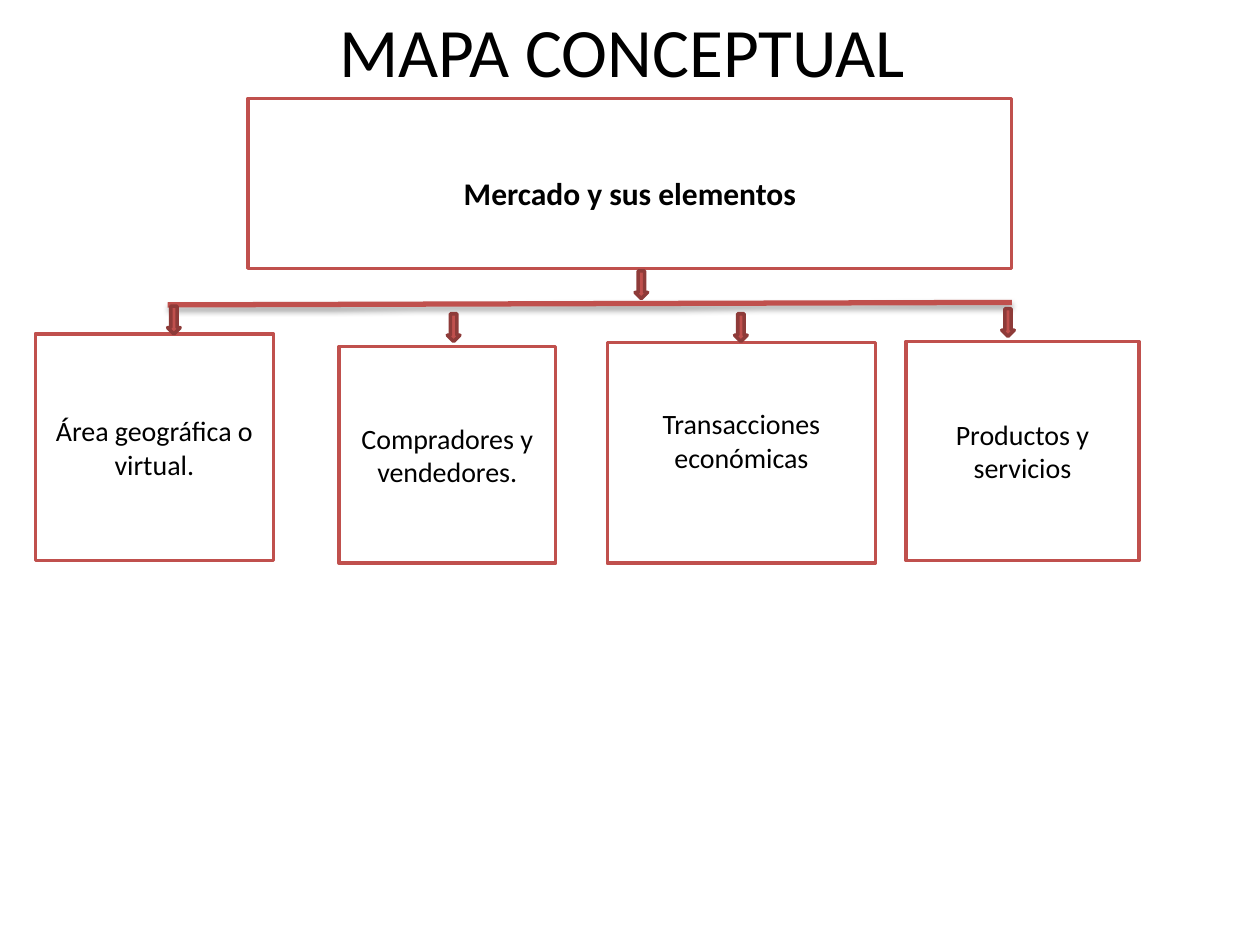
from lxml import etree
from pptx import Presentation
from pptx import util as u
from pptx.dml.color import RGBColor
from pptx.enum import shapes, text
from pptx.oxml.ns import qn

COLORS = {"ink": "000000", "paper": "FFFFFF", "red": "C0504D", "dark_red": "8E3B39"}
TITLE = {"name": "Calibri", "size": u.Pt(39.6), "bold": False}
HEADING = {"name": "Calibri", "size": u.Pt(18), "bold": True}
BODY = {"name": "Calibri", "size": u.Pt(16), "bold": False}


class ConceptMap:
    """Draws a concept map on a slide of 100 columns by 75 rows."""

    def __init__(self, presentation):
        self.column = presentation.slide_width / 100
        self.row = presentation.slide_height / 75
        self.slide = presentation.slides.add_slide(presentation.slide_layouts[5])

    def place(self, left, top, width, height):
        return (round(left * self.column), round(top * self.row),
                round(width * self.column), round(height * self.row))

    def color(self, name):
        return RGBColor.from_string(COLORS[name])

    def label(self, shape, words, style, insets=None):
        frame = shape.text_frame
        frame.text = words
        settings = {"word_wrap": True, "auto_size": text.MSO_AUTO_SIZE.NONE,
                    "vertical_anchor": text.MSO_ANCHOR.MIDDLE, **(insets or {})}
        for name, value in settings.items():
            setattr(frame, name, value)
        paragraph = frame.paragraphs[0]
        paragraph.alignment = text.PP_ALIGN.CENTER
        for name, value in style.items():
            setattr(paragraph.font, name, value)
        paragraph.font.color.rgb = self.color("ink")

    def title(self, words, *area):
        shape = self.slide.shapes.title
        shape.left, shape.top, shape.width, shape.height = self.place(*area)
        self.label(shape, words, TITLE)

    def shape(self, kind, area, fill, line):
        shape = self.slide.shapes.add_shape(kind, *self.place(*area))
        shape.shadow.inherit = False
        shape.fill.solid()
        shape.fill.fore_color.rgb = self.color(fill)
        shape.line.color.rgb = self.color(line)
        shape.line.width = u.Pt(2)
        return shape

    def box(self, words, area, style=BODY, insets=None):
        shape = self.shape(shapes.MSO_SHAPE.RECTANGLE, area, "paper", "red")
        self.label(shape, words, style, insets)

    def arrow(self, center, middle, length=2.2, breadth=1):
        area = (center - length / 2, middle - breadth / 2, length, breadth)
        shape = self.shape(shapes.MSO_SHAPE.RIGHT_ARROW, area, "red", "dark_red")
        shape.rotation = 90

    def branch(self, start, end):
        line = self.slide.shapes.add_connector(
            shapes.MSO_CONNECTOR.STRAIGHT, *self.place(*start, *end))
        line.line.color.rgb = self.color("red")
        line.line.width = u.Pt(3)
        effects = etree.SubElement(line._element.spPr, qn("a:effectLst"))
        shadow = etree.SubElement(effects, qn("a:outerShdw"), blurRad="40000",
                                  dist="23000", dir="5400000", rotWithShape="0")
        tint = etree.SubElement(shadow, qn("a:srgbClr"), val=COLORS["ink"])
        etree.SubElement(tint, qn("a:alpha"), val="35000")


def main():
    presentation = Presentation()
    presentation.slide_width, presentation.slide_height = u.Inches(10), u.Inches(7.5)
    concept_map = ConceptMap(presentation)
    concept_map.title("MAPA CONCEPTUAL ", 5, 0.1, 90, 7.7)
    concept_map.box("Mercado y sus elementos", (19.7, 7.8, 60.6, 13.5), HEADING,
                    {"margin_top": u.Inches(0.2)})
    elements = [
        ("Área geográfica o virtual.", (2.8, 26.5, 18.9, 18), None),
        ("Compradores y vendedores.", (26.9, 27.5, 17.2, 17.2), None),
        ("Transacciones económicas", (48.2, 27.2, 21.3, 17.5),
         {"margin_bottom": u.Inches(0.25)}),
        ("Productos y servicios", (71.9, 27.1, 18.5, 17.4), None),
    ]
    for words, area, insets in elements:
        concept_map.box(words, area, insets=insets)
    concept_map.branch((13.3, 24.2), (80.3, 24))
    for center, middle in [(13.8, 25.4), (36, 26), (58.8, 26), (80, 25.6), (50.9, 22.6)]:
        concept_map.arrow(center, middle)
    presentation.save("out.pptx")


if __name__ == "__main__":
    main()
